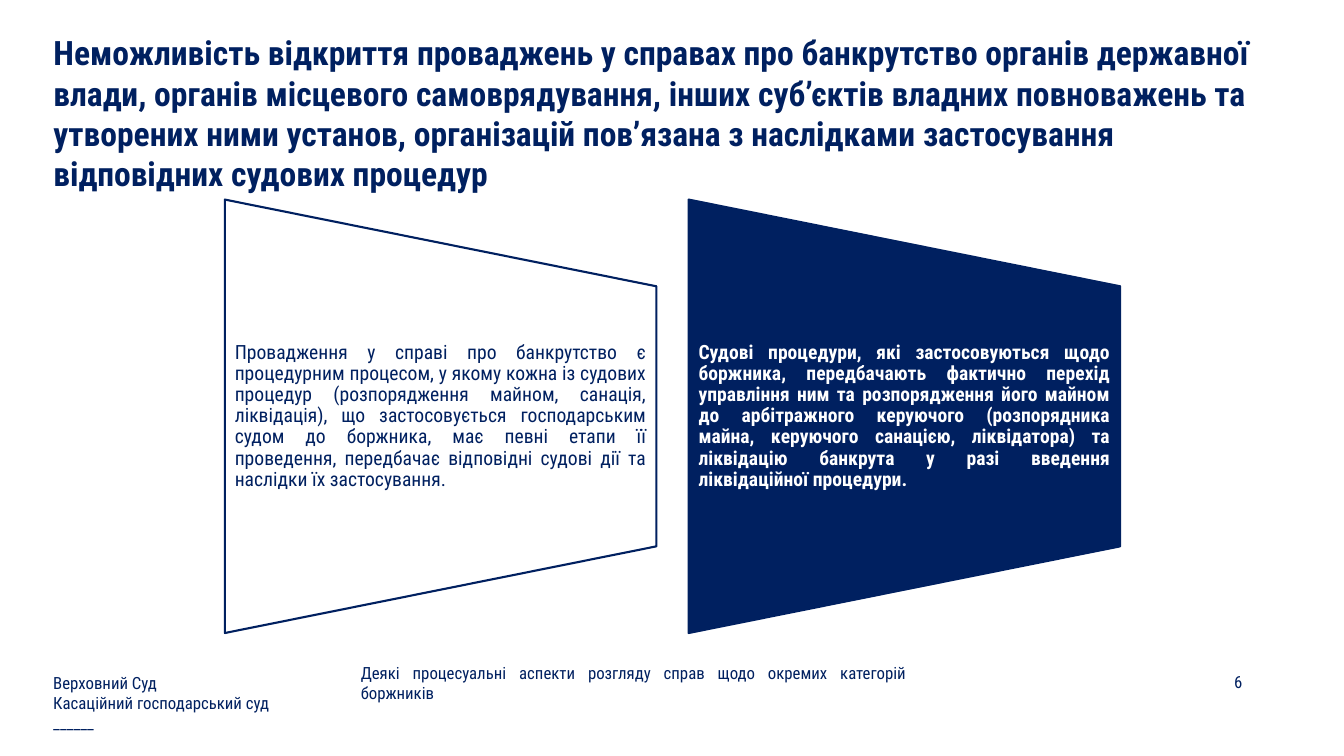
"""Build a court slide with a heading, two tapered panels and a footer."""
from dataclasses import dataclass

import pptx
import pptx.dml.color
import pptx.enum.shapes
import pptx.enum.text
import pptx.slide
import pptx.text.text
import pptx.util

Inches = pptx.util.Inches
RGBColor = pptx.dml.color.RGBColor
Align = pptx.enum.text.PP_ALIGN
Anchor = pptx.enum.text.MSO_ANCHOR

NAVY = RGBColor(0x00, 0x20, 0x60)
WHITE = RGBColor(0xFF, 0xFF, 0xFF)
FONT = "Roboto Condensed"

PANEL_LEFT, PANEL_TOP, PANEL_STEP = 2.22, 1.99, 4.6
PANEL_WIDTH, PANEL_HEIGHT = 4.3, 4.28
TEXT_TOP, TEXT_HEIGHT = 2.84, 2.58


@dataclass(frozen=True)
class Panel:
    text: str
    fill: RGBColor
    color: RGBColor
    bold: bool


@dataclass(frozen=True)
class Footer:
    text: str
    left: float
    width: float
    height: float
    align: Align


TITLE = (
    "Неможливість відкриття проваджень у справах про банкрутство органів державної "
    "влади, органів місцевого самоврядування, інших суб’єктів владних повноважень та "
    "утворених ними установ, організацій пов’язана з наслідками застосування "
    "відповідних судових процедур"
)
PANELS = [
    Panel(
        "Провадження у справі про банкрутство є процедурним процесом, у якому кожна "
        "із судових процедур (розпорядження майном, санація, ліквідація), що "
        "застосовується господарським судом до боржника, має певні етапи її "
        "проведення, передбачає відповідні судові дії та наслідки їх застосування.",
        WHITE, NAVY, False,
    ),
    Panel(
        "Судові процедури, які застосовуються щодо боржника, передбачають фактично "
        "перехід управління ним та розпорядження його майном до арбітражного "
        "керуючого (розпорядника майна, керуючого санацією, ліквідатора) та "
        "ліквідацію банкрута у разі введення ліквідаційної процедури.",
        NAVY, WHITE, True,
    ),
]
FOOTER_TOP = 6.6
FOOTERS = [
    Footer("Верховний Суд\nКасаційний господарський суд\n______",
           0.43, 2.54, 0.75, Align.LEFT),
    Footer("Деякі процесуальні аспекти розгляду справ щодо окремих категорій боржників",
           3.48, 5.61, 0.35, Align.JUSTIFY),
    Footer("6", 9.42, 3, 0.33, Align.RIGHT),
]


def write_text(frame: pptx.text.text.TextFrame, text: str, *, size: float,
               color: RGBColor = NAVY, bold: bool = False, align: Align = Align.LEFT,
               anchor: Anchor = Anchor.MIDDLE, spacing: float = 1.0) -> None:
    frame.word_wrap = True
    frame.auto_size = pptx.enum.text.MSO_AUTO_SIZE.NONE
    frame.vertical_anchor = anchor
    frame.text = text
    for para in frame.paragraphs:
        para.alignment = align
        para.line_spacing = spacing
        for span in para.runs:
            span.font.name = FONT
            span.font.size = pptx.util.Pt(size)
            span.font.bold = bold
            span.font.color.rgb = color


def draw_title(page: pptx.slide.Slide) -> None:
    title = page.shapes.title
    title.left, title.top = Inches(0.43), Inches(0.27)
    title.width, title.height = Inches(12.25), Inches(1.72)
    write_text(title.text_frame, TITLE, size=24, bold=True, anchor=Anchor.TOP)


def draw_panel(page: pptx.slide.Slide, panel: Panel, left: float) -> None:
    shape = page.shapes.add_shape(
        pptx.enum.shapes.MSO_SHAPE.FLOWCHART_MANUAL_OPERATION,
        Inches(left), Inches(PANEL_TOP), Inches(PANEL_WIDTH), Inches(PANEL_HEIGHT))
    shape.rotation = 270
    shape.shadow.inherit = False
    shape.fill.solid()
    shape.fill.fore_color.rgb = panel.fill
    shape.line.color.rgb = NAVY
    shape.line.width = pptx.util.Pt(1.5)
    box = page.shapes.add_textbox(Inches(left + 0.01), Inches(TEXT_TOP),
                                  Inches(PANEL_HEIGHT), Inches(TEXT_HEIGHT))
    frame = box.text_frame
    frame.margin_top = frame.margin_bottom = 0
    write_text(frame, panel.text, size=14, color=panel.color, bold=panel.bold,
               align=Align.JUSTIFY, spacing=0.9)


def draw_footer(page: pptx.slide.Slide, footer: Footer) -> None:
    box = page.shapes.add_textbox(Inches(footer.left), Inches(FOOTER_TOP),
                                  Inches(footer.width), Inches(footer.height))
    write_text(box.text_frame, footer.text, size=12, align=footer.align)


def main() -> None:
    deck = pptx.Presentation()
    deck.slide_width, deck.slide_height = Inches(13.33), Inches(7.5)
    page = deck.slides.add_slide(deck.slide_layouts.get_by_name("Title Only"))
    draw_title(page)
    for index, panel in enumerate(PANELS):
        draw_panel(page, panel, PANEL_LEFT + index * PANEL_STEP)
    for footer in FOOTERS:
        draw_footer(page, footer)
    deck.save("out.pptx")


if __name__ == "__main__":
    main()
